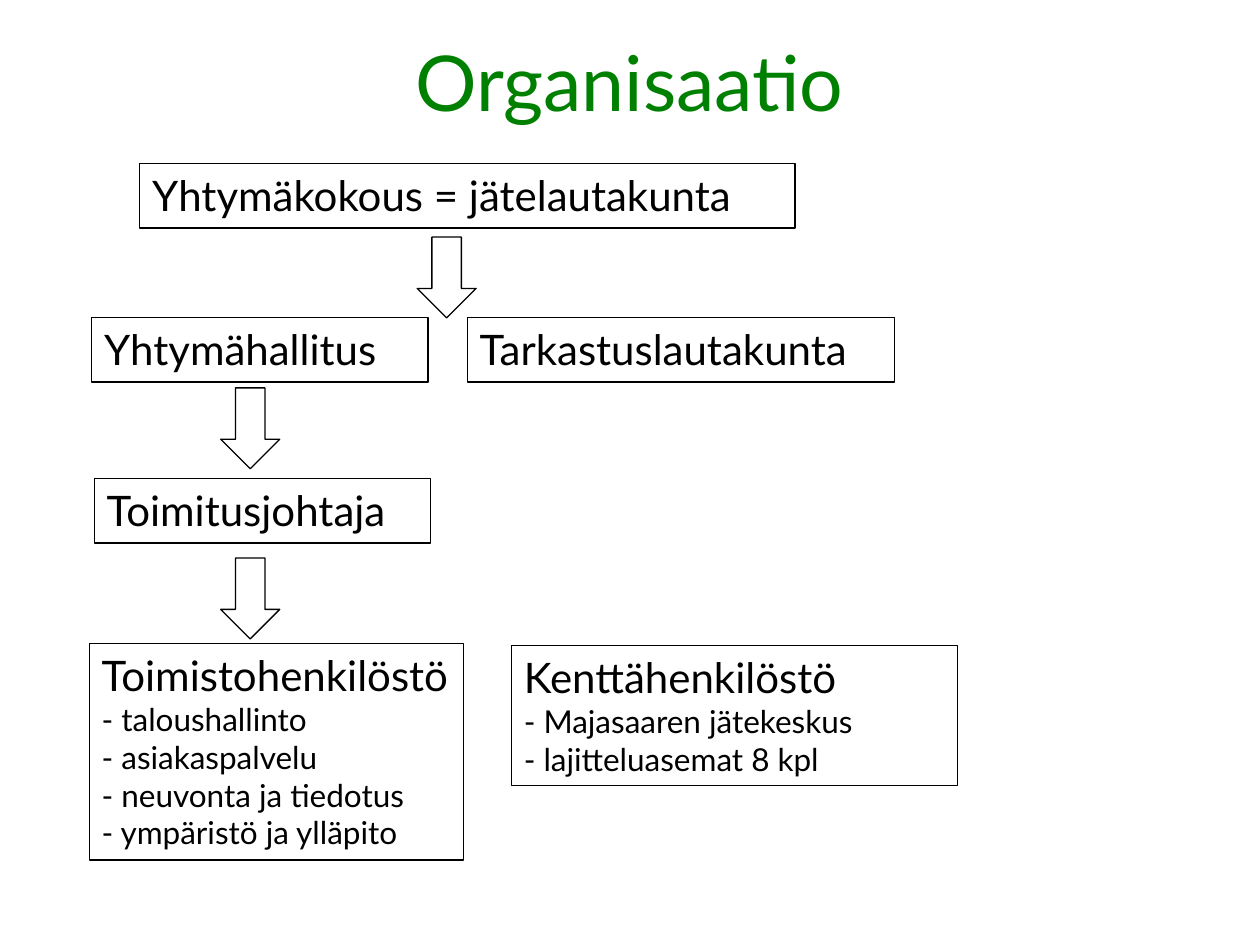
from pptx import Presentation
from pptx import util as u
from pptx.dml.color import RGBColor
from pptx.enum import shapes, text

FONT = "Lato"
TITLE = "Organisaatio"
BOXES = [
    (2.82, 3.3, 13.21, 1.3, ["Yhtymäkokous = jätelautakunta"]),
    (1.85, 6.4, 6.78, 1.3, ["Yhtymähallitus"]),
    (9.42, 6.4, 8.61, 1.3, ["Tarkastuslautakunta"]),
    (1.9, 9.65, 6.78, 1.3, ["Toimitusjohtaja"]),
    (1.8, 12.97, 7.54, 4.37, [
        "Toimistohenkilöstö",
        "- taloushallinto",
        "- asiakaspalvelu",
        "- neuvonta ja tiedotus",
        "- ympäristö ja ylläpito",
    ]),
    (10.31, 13.01, 8.99, 2.82, [
        "Kenttähenkilöstö",
        "- Majasaaren jätekeskus",
        "- lajitteluasemat 8 kpl",
    ]),
]
ARROWS = [(8.41, 4.78), (4.45, 7.82), (4.45, 11.25)]
ARROW_SIZE = (1.19, 1.63)


def color(hex_value):
    return RGBColor.from_string(hex_value)


def style(p, size, hex_value, align):
    p.font.name = FONT
    p.font.size = u.Pt(size)
    p.font.color.rgb = color(hex_value)
    p.alignment = align


def add_outline(s, kind, *bounds):
    sp = s.shapes.add_shape(kind, *map(u.Cm, bounds))
    sp.shadow.inherit = False
    sp.fill.background()
    sp.line.color.rgb = color("000000")
    sp.line.width = u.Pt(0.75)
    return sp


def add_box(s, left, top, width, height, lines):
    sp = add_outline(s, shapes.MSO_SHAPE.RECTANGLE, left, top, width, height)
    tf = sp.text_frame
    tf.word_wrap = True
    tf.auto_size = text.MSO_AUTO_SIZE.SHAPE_TO_FIT_TEXT
    tf.vertical_anchor = text.MSO_ANCHOR.TOP
    tf.text = "\n".join(lines)
    for i, p in enumerate(tf.paragraphs):
        style(p, 18 if i else 24, "000000", text.PP_ALIGN.LEFT)


def add_title(s):
    title = s.shapes.title
    title.left, title.top = u.Cm(1.9), u.Cm(0.71)
    title.width, title.height = u.Cm(21.59), u.Cm(1.83)
    tf = title.text_frame
    tf.text = TITLE
    tf.auto_size = text.MSO_AUTO_SIZE.NONE
    tf.vertical_anchor = text.MSO_ANCHOR.MIDDLE
    style(tf.paragraphs[0], 44, "008000", text.PP_ALIGN.CENTER)


def main():
    prs = Presentation()
    prs.slide_width, prs.slide_height = u.Cm(25.4), u.Cm(19.05)
    s = prs.slides.add_slide(prs.slide_layouts[5])
    add_title(s)
    for box in BOXES:
        add_box(s, *box)
    for left, top in ARROWS:
        add_outline(s, shapes.MSO_SHAPE.DOWN_ARROW, left, top, *ARROW_SIZE)
    prs.save("out.pptx")


if __name__ == "__main__":
    main()
